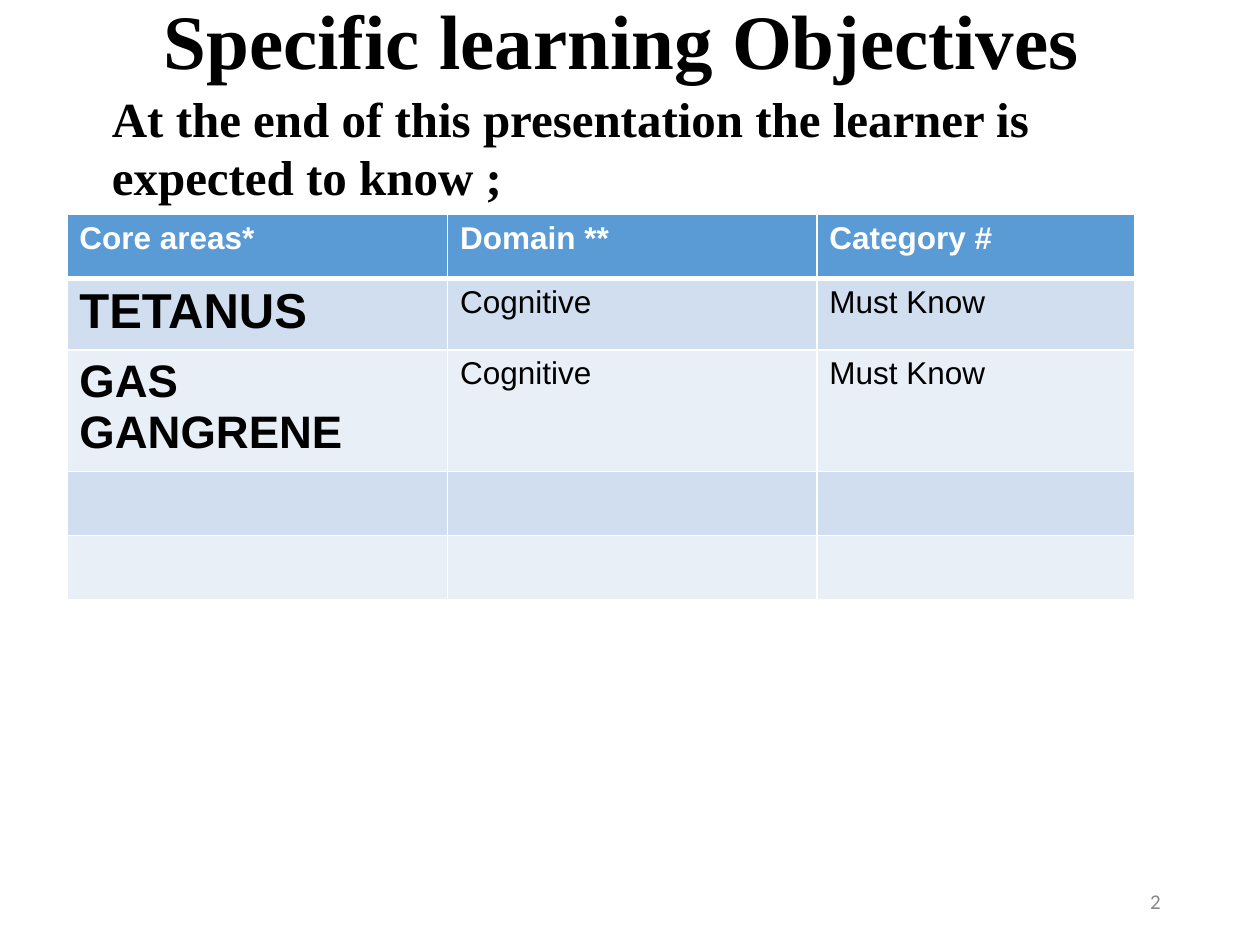
"""Build the learning objectives slide with its table of core areas."""
import pptx
import pptx.dml.color
import pptx.enum.text
import pptx.oxml
import pptx.oxml.ns
import pptx.util

Pt = pptx.util.Pt
RGB = pptx.dml.color.RGBColor.from_string
ANCHOR = pptx.enum.text.MSO_ANCHOR
ALIGN = pptx.enum.text.PP_ALIGN

THEME = {
    "black": "000000", "white": "FFFFFF", "grey": "888888",
    "header": "5B9BD5", "bands": ("D0DEEF", "E9EFF7"),
    "serif": "Times New Roman", "sans": "Arial", "number": "Calibri",
    "title": 44, "intro": 28, "topic": 28, "long_topic": 26, "body": 18, "small": 12,
}


def style(p, text, color, **font):
    r = p.add_run()
    r.text = text
    r.font.color.rgb = RGB(THEME[color])
    for name, value in font.items():
        setattr(r.font, name, value)


def border(cell, side, width):
    tcPr = cell._tc.get_or_add_tcPr()
    tcPr.append(pptx.oxml.parse_xml(
        f'<a:{side} {pptx.oxml.ns.nsdecls("a")} w="{Pt(width)}"><a:solidFill>'
        f'<a:srgbClr val="{THEME["white"]}"/></a:solidFill></a:{side}>'))


prs = pptx.Presentation()
prs.slide_width, prs.slide_height = Pt(720), Pt(540)
s = prs.slides.add_slide(prs.slide_layouts[6])

texts = [
    ("Specific learning Objectives", (86.4, -18, 547.2, 87.1), ANCHOR.MIDDLE,
     {"line_spacing": 0.9}, "black",
     {"name": THEME["serif"], "size": Pt(THEME["title"]), "bold": True}),
    ("At the end of this presentation the learner is expected to know ;",
     (56.9, 46.8, 578.9, 41), ANCHOR.TOP, {}, "black",
     {"name": THEME["serif"], "size": Pt(THEME["intro"]), "bold": True}),
    ("2", (508.3, 500.4, 162, 28.8), ANCHOR.MIDDLE, {"alignment": ALIGN.RIGHT}, "grey",
     {"name": THEME["number"], "size": Pt(THEME["small"])}),
]
for text, box, anchor, layout, color, font in texts:
    tf = s.shapes.add_textbox(*map(Pt, box)).text_frame
    for name, value in {"word_wrap": True, "vertical_anchor": anchor}.items():
        setattr(tf, name, value)
    p = tf.paragraphs[0]
    for name, value in layout.items():
        setattr(p, name, value)
    style(p, text, color, **font)

rows = [
    ("Core areas*", "Domain **", "Category #"),
    ("TETANUS", "Cognitive", "Must Know"),
    ("GAS GANGRENE", "Cognitive", "Must Know"),
    ("", "", ""),
    ("", "", ""),
]
widths = (217.6, 211, 181.4)
heights = (36.5, 40.7, 36.5, 36.5, 36.5)
topic_sizes = {1: THEME["topic"], 2: THEME["long_topic"]}
table = s.shapes.add_table(len(rows), len(widths), Pt(38.2), Pt(122.6),
                           Pt(sum(widths)), Pt(sum(heights))).table
for column, width in zip(table.columns, widths):
    column.width = Pt(width)
for i, (row, height) in enumerate(zip(rows, heights)):
    table.rows[i].height = Pt(height)
    for j, text in enumerate(row):
        cell = table.cell(i, j)
        for side in ("lnL", "lnR", "lnT", "lnB"):
            heavy = (i, side) in ((0, "lnB"), (1, "lnT"))
            border(cell, side, 3 if heavy else 1)
        cell.fill.solid()
        cell.fill.fore_color.rgb = RGB(THEME["bands"][(i - 1) % 2] if i else THEME["header"])
        if text:
            size = topic_sizes.get(i, THEME["body"]) if j == 0 else THEME["body"]
            style(cell.text_frame.paragraphs[0], text, "black" if i else "white",
                  name=THEME["sans"], size=Pt(size), bold=i == 0 or j == 0)

prs.save("out.pptx")
